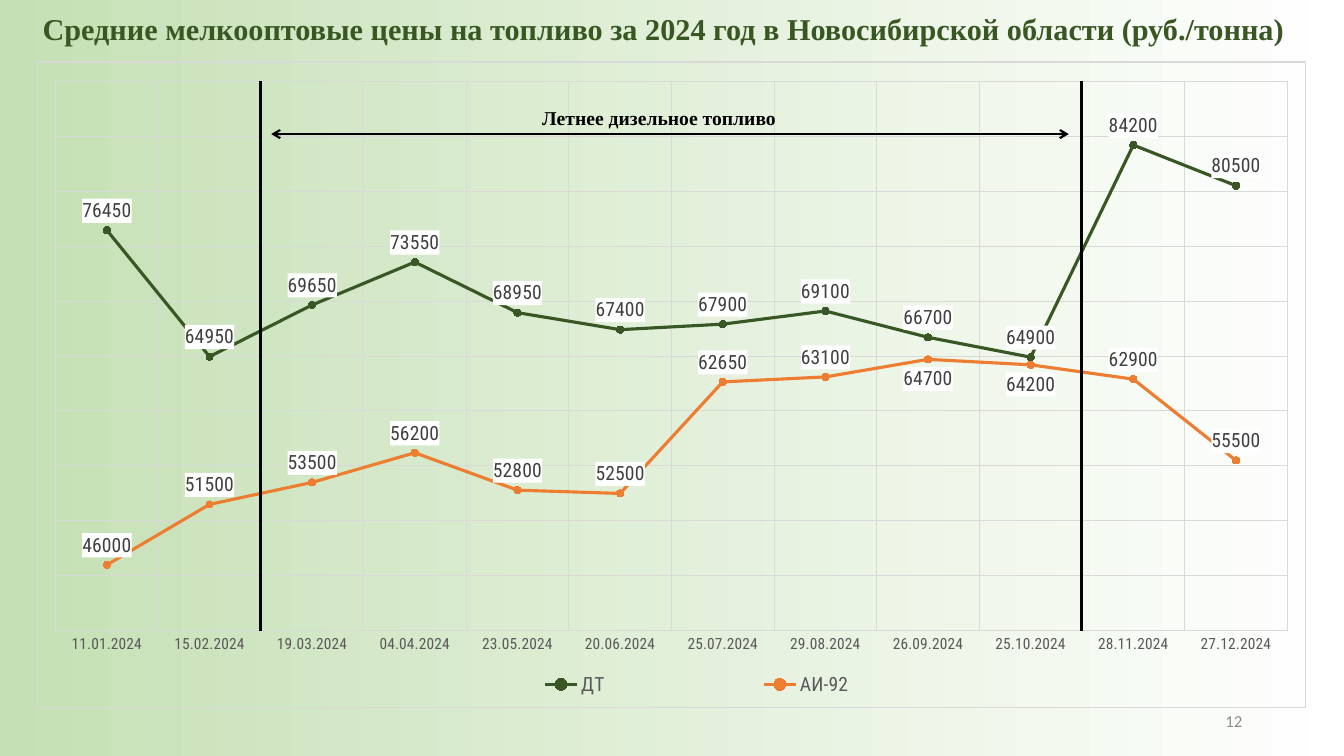
from lxml.etree import SubElement
from pptx import Presentation
from pptx.chart.data import CategoryChartData
from pptx.dml.color import RGBColor
from pptx.enum.chart import XL_CHART_TYPE as ChartType
from pptx.enum.chart import XL_LABEL_POSITION as LabelPosition
from pptx.enum.chart import XL_LEGEND_POSITION as LegendPosition
from pptx.enum.chart import XL_MARKER_STYLE as MarkerStyle
from pptx.enum.chart import XL_TICK_LABEL_POSITION as TickLabels
from pptx.enum.chart import XL_TICK_MARK as TickMark
from pptx.enum.shapes import MSO_CONNECTOR as ConnectorType
from pptx.enum.text import MSO_ANCHOR as Anchor
from pptx.enum.text import PP_ALIGN as Align
from pptx.oxml import parse_xml
from pptx.oxml.ns import nsdecls, qn
from pptx.util import Inches, Pt

COLORS = {
    "diesel": "385724", "petrol": "ED7D31", "title": "385723",
    "black": "000000", "white": "FFFFFF", "mint": "C5E0B4",
    "grid": "D9D9D9", "axis": "595959", "label": "404040", "number": "8C8C8C",
}
SERIF, SANS, CONDENSED = "Times New Roman", "Calibri", "Roboto Condensed"

DATES = ["11.01.2024", "15.02.2024", "19.03.2024", "04.04.2024",
         "23.05.2024", "20.06.2024", "25.07.2024", "29.08.2024",
         "26.09.2024", "25.10.2024", "28.11.2024", "27.12.2024"]
PRICES = {
    "ДТ": ("diesel", [76450, 64950, 69650, 73550, 68950, 67400,
                      67900, 69100, 66700, 64900, 84200, 80500], []),
    "АИ-92": ("petrol", [46000, 51500, 53500, 56200, 52800, 52500,
                         62650, 63100, 64700, 64200, 62900, 55500], [8, 9]),
}


def apply(target, **values):
    for name, value in values.items():
        setattr(target, name, value)


class SlideBuilder:
    """Draws styled elements on the current slide."""

    def __init__(self, page):
        self.page = page

    def color(self, name):
        return RGBColor.from_string(COLORS[name])

    def font(self, font, size, color, name, bold=False):
        apply(font, size=Pt(size), name=name, bold=bold)
        font.color.rgb = self.color(color)

    def line(self, line, color, width):
        line.color.rgb = self.color(color)
        line.width = Pt(width)

    def background(self, *colors):
        fill = self.page.background.fill
        fill.gradient()
        fill.gradient_angle = 0
        for stop, color in zip(fill.gradient_stops, colors):
            stop.color.rgb = self.color(color)

    def text(self, place, words, style, frame=None, paragraph=None):
        box = self.page.shapes.add_textbox(*map(Inches, place))
        apply(box.text_frame, word_wrap=True, **(frame or {}))
        para = box.text_frame.paragraphs[0]
        apply(para, **(paragraph or {}))
        span = para.add_run()
        span.text = words
        self.font(span.font, **style)

    def connector(self, start, end, width, arrows=False):
        connector = self.page.shapes.add_connector(
            ConnectorType.STRAIGHT, *map(Inches, start + end))
        self.line(connector.line, "black", width)
        properties = connector.element.spPr
        if arrows:
            for tag in ("a:headEnd", "a:tailEnd"):
                SubElement(properties.find(qn("a:ln")), qn(tag), type="arrow")
        SubElement(properties, qn("a:effectLst"))

    def layout(self, parent, index, x, y, w, h, inner=False):
        old = parent.find(qn("c:layout"))
        if old is not None:
            parent.remove(old)
        target = '<c:layoutTarget val="inner"/>' if inner else ""
        sizes = "".join(f'<c:{tag} val="{value}"/>' for tag, value in
                        (("xMode", "edge"), ("yMode", "edge"),
                         ("x", x), ("y", y), ("w", w), ("h", h)))
        parent.insert(index, parse_xml(
            f'<c:layout {nsdecls("c")}><c:manualLayout>{target}{sizes}'
            '</c:manualLayout></c:layout>'))

    def shape_style(self, parent, content):
        parent.find(qn("c:txPr")).addprevious(parse_xml(
            f'<c:spPr {nsdecls("c", "a")}>{content}</c:spPr>'))

    def solid(self, color):
        return f'<a:solidFill><a:srgbClr val="{COLORS[color]}"/></a:solidFill>'

    def axis(self, axis, size, font, **values):
        apply(axis, has_major_gridlines=True, major_tick_mark=TickMark.NONE,
              minor_tick_mark=TickMark.NONE, **values)
        self.line(axis.major_gridlines.format.line, "grid", 0.75)
        self.font(axis.tick_labels.font, size, "axis", font)

    def series(self, series, color, below):
        series.smooth = False
        self.line(series.format.line, color, 2.25)
        apply(series.marker, style=MarkerStyle.CIRCLE, size=5)
        series.marker.format.fill.solid()
        series.marker.format.fill.fore_color.rgb = self.color(color)
        self.line(series.marker.format.line, color, 0.75)
        labels = series.data_labels
        apply(labels, show_value=True, position=LabelPosition.ABOVE)
        self.font(labels.font, 14, "label", CONDENSED)
        for index in below:
            label = series.points[index].data_label
            self.font(label.font, 14, "label", CONDENSED)
            label.position = LabelPosition.BELOW

    def price_chart(self, place):
        data = CategoryChartData()
        data.categories = DATES
        for name, (_, prices, _) in PRICES.items():
            data.add_series(name, prices)
        chart = self.page.shapes.add_chart(
            ChartType.LINE_MARKERS, *map(Inches, place), data).chart
        apply(chart, has_title=False, has_legend=True)
        self.font(chart.font, 10, "black", SANS)
        chart.plots[0].vary_by_categories = False
        apply(chart.legend, position=LegendPosition.BOTTOM,
              include_in_layout=False)
        self.font(chart.legend.font, 14, "axis", CONDENSED)
        self.axis(chart.category_axis, 11, CONDENSED)
        self.line(chart.category_axis.format.line, "grid", 0.75)
        self.axis(chart.value_axis, 9, SANS, minimum_scale=40000,
                  maximum_scale=90000, major_unit=5000,
                  tick_label_position=TickLabels.NONE)
        chart.value_axis.format.line.fill.background()
        for series in chart.plots[0].series:
            color, _, below = PRICES[series.name]
            self.series(series, color, below)

        root = chart.element
        self.shape_style(root, '<a:noFill/><a:ln w="9525">'
                         f'{self.solid("grid")}</a:ln>')
        for labels in root.iter(qn("c:dLbls"), qn("c:dLbl")):
            self.shape_style(labels, self.solid("white"))
        body = root.find(qn("c:chart"))
        self.layout(body.find(qn("c:plotArea")), 0,
                    0.014, 0.03, 0.972, 0.852, inner=True)
        self.layout(body.find(qn("c:legend")), 1, 0.28, 0.935, 0.48, 0.06)


def main():
    deck = Presentation()
    apply(deck, slide_width=Inches(13.33), slide_height=Inches(7.5))
    slide = SlideBuilder(deck.slides.add_slide(deck.slide_layouts[6]))
    slide.background("mint", "white")
    slide.text(
        (0, 0.05, 13.16, 0.47),
        "Средние мелкооптовые цены на топливо за 2024 год "
        "в Новосибирской области (руб./тонна)",
        {"size": 21.6, "color": "title", "name": SERIF, "bold": True},
        {"vertical_anchor": Anchor.BOTTOM},
        {"alignment": Align.CENTER, "line_spacing": 0.98})
    slide.text((9.42, 6.95, 3, 0.4), "12",
               {"size": 12, "color": "number", "name": SANS},
               {"vertical_anchor": Anchor.MIDDLE}, {"alignment": Align.RIGHT})
    slide.price_chart((0.37, 0.61, 12.58, 6.41))
    for season_edge in (2.58, 10.73):
        slide.connector((season_edge, 6.26), (season_edge, 0.8), 2.25)
    slide.connector((2.69, 1.33), (10.6, 1.33), 1.5, arrows=True)
    slide.text((5.28, 1, 3.14, 0.33), "Летнее дизельное топливо",
               {"size": 14, "color": "black", "name": SERIF, "bold": True})
    deck.save("out.pptx")


if __name__ == "__main__":
    main()
